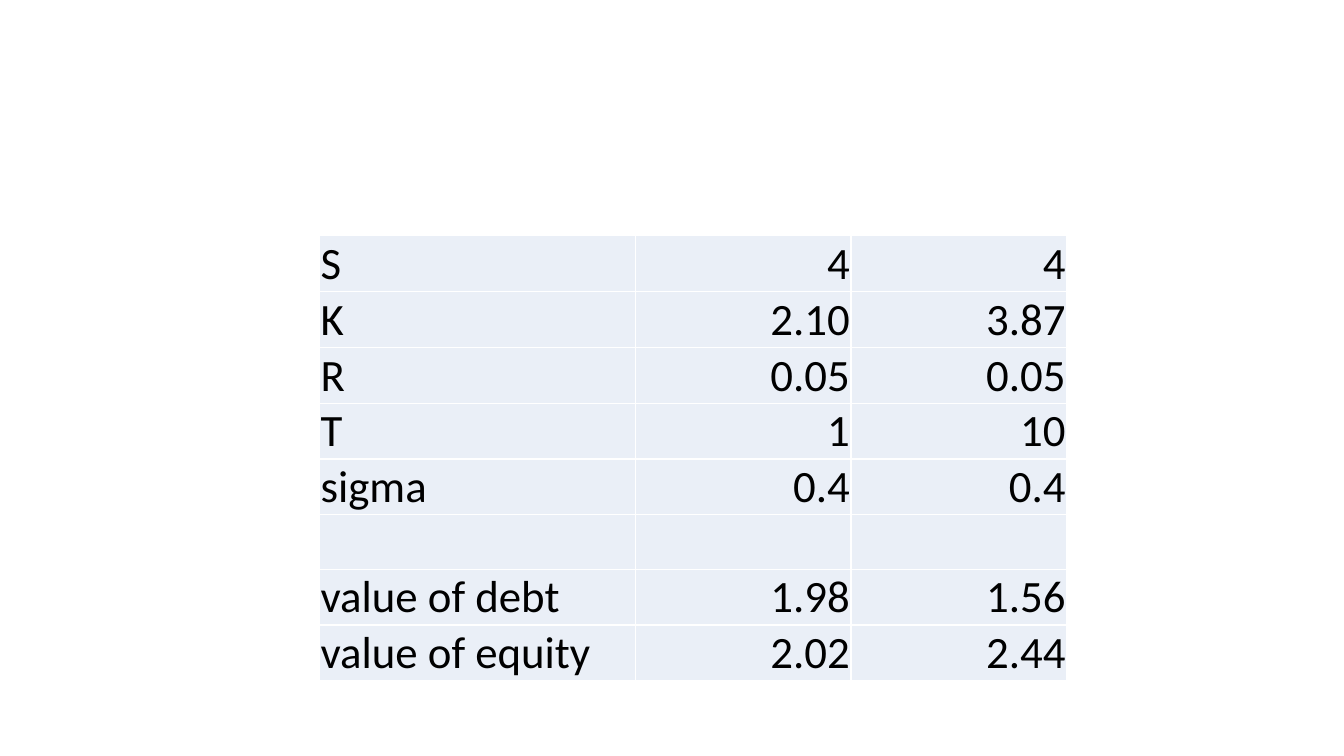
from dataclasses import dataclass

from lxml import etree
from pptx import Presentation
from pptx import util as u
from pptx.dml.color import RGBColor
from pptx.enum import text
from pptx.oxml import ns


@dataclass(frozen=True)
class Theme:
    ink: str = "000000"
    fill: str = "EAEFF7"
    rule: str = "FFFFFF"
    font: str = "Calibri"
    size: int = 32
    line: int = 1


theme = Theme()


def edge(cell):
    """Draw a thin rule on all four sides of a cell."""
    props = cell._tc.get_or_add_tcPr()
    for side in "LRTB":
        line = etree.SubElement(props, ns.qn(f"a:ln{side}"), w=str(u.Pt(theme.line)))
        solid = etree.SubElement(line, ns.qn("a:solidFill"))
        etree.SubElement(solid, ns.qn("a:srgbClr"), val=theme.rule)


deck = Presentation()
deck.slide_width, deck.slide_height = u.Inches(13.33), u.Inches(7.5)
slide = deck.slides.add_slide(deck.slide_layouts[6])

rows = [
    ("S", "4", "4"),
    ("K", "2.10", "3.87"),
    ("R", "0.05", "0.05"),
    ("T", "1", "10"),
    ("sigma", "0.4", "0.4"),
    ("", "", ""),
    ("value of debt", "1.98", "1.56"),
    ("value of equity", "2.02", "2.44"),
]
widths = [3.13, 2.14, 2.14]
height = 0.54

table = slide.shapes.add_table(
    len(rows), len(widths), u.Inches(3.17), u.Inches(2.34),
    u.Inches(sum(widths)), u.Inches(height * len(rows)),
).table
for col, width in zip(table.columns, widths):
    col.width = u.Inches(width)
for row in table.rows:
    row.height = u.Inches(height)

format = {
    "margin_left": u.Inches(0.01),
    "margin_right": u.Inches(0.01),
    "margin_top": u.Inches(0.01),
    "margin_bottom": 0,
    "vertical_anchor": text.MSO_ANCHOR.BOTTOM,
}
style = {"name": theme.font, "size": u.Pt(theme.size), "bold": False}

for r, row in enumerate(rows):
    for c, value in enumerate(row):
        cell = table.cell(r, c)
        edge(cell)
        cell.fill.solid()
        cell.fill.fore_color.rgb = RGBColor.from_string(theme.fill)
        for name, setting in format.items():
            setattr(cell, name, setting)
        if not value:
            continue
        para = cell.text_frame.paragraphs[0]
        para.alignment = text.PP_ALIGN.RIGHT if c else text.PP_ALIGN.LEFT
        run = para.add_run()
        run.text = value
        for name, setting in style.items():
            setattr(run.font, name, setting)
        run.font.color.rgb = RGBColor.from_string(theme.ink)

deck.save("out.pptx")
